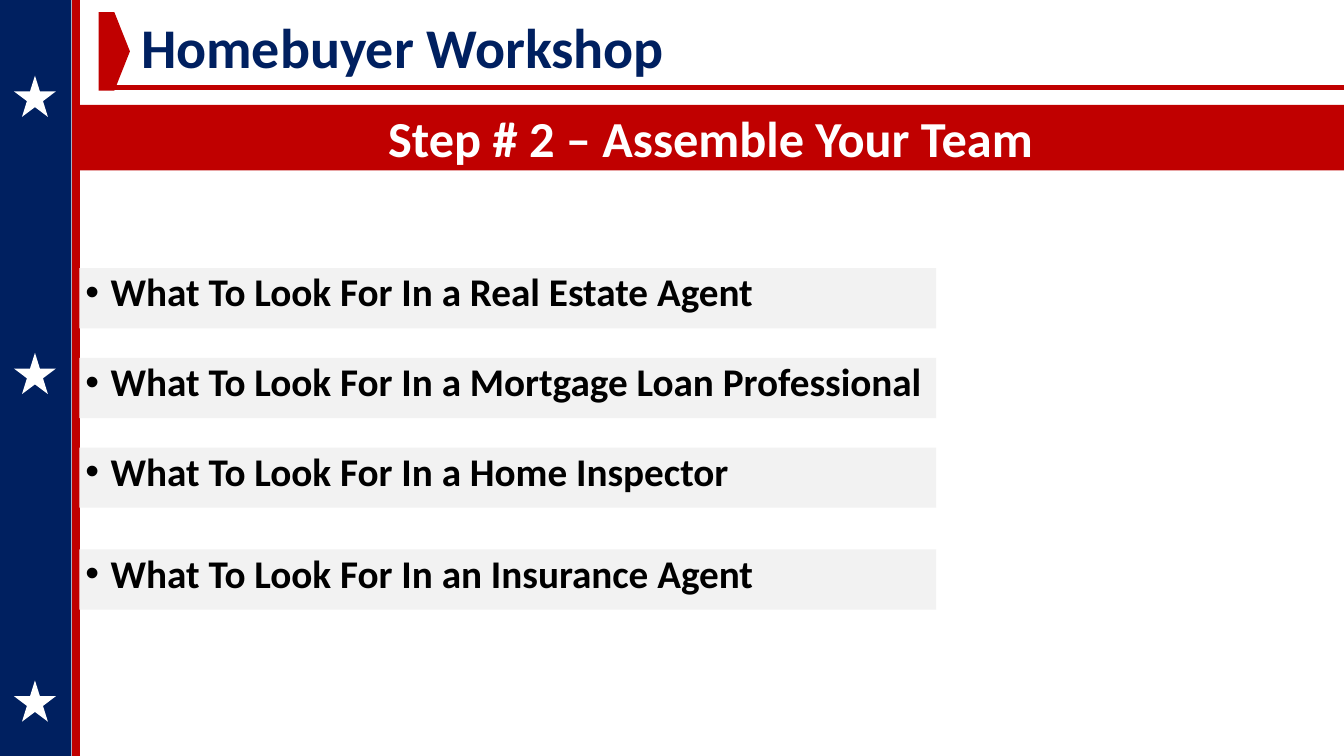
from dataclasses import dataclass

from lxml.etree import SubElement
from pptx import Presentation
from pptx.dml.color import RGBColor
from pptx.enum.shapes import MSO_CONNECTOR, MSO_SHAPE
from pptx.enum.text import MSO_ANCHOR, MSO_AUTO_SIZE, PP_ALIGN
from pptx.oxml.ns import qn
from pptx.util import Pt


@dataclass(frozen=True)
class Theme:
    font: str = "Calibri"
    navy: str = "002060"
    red: str = "C00000"
    white: str = "FFFFFF"
    black: str = "000000"
    pale: str = "F2F2F2"
    title: int = 40
    step: int = 36
    item: int = 28


class Deck:
    def __init__(self, theme, wide, high):
        self.theme = theme
        self.prs = Presentation()
        self.prs.slide_width, self.prs.slide_height = Pt(wide), Pt(high)
        self.slide = self.prs.slides.add_slide(self.prs.slide_layouts[5])

    def apply(self, target, values):
        for name, value in values.items():
            setattr(target, name, value)

    def label(self, shape, text, size, color, frame=None, para=None):
        self.apply(shape.text_frame, frame or {})
        line = shape.text_frame.paragraphs[0]
        self.apply(line, para or {})
        run = line.add_run()
        run.text = text
        self.apply(run.font, {"name": self.theme.font, "size": Pt(size), "bold": True})
        run.font.color.rgb = RGBColor.from_string(color)
        return line

    def title(self, text, *box):
        shape = self.slide.shapes.title
        self.apply(shape, dict(zip(("left", "top", "width", "height"), map(Pt, box))))
        self.label(shape, text, self.theme.title, self.theme.navy,
                   {"word_wrap": False, "auto_size": MSO_AUTO_SIZE.SHAPE_TO_FIT_TEXT,
                    "vertical_anchor": MSO_ANCHOR.TOP},
                   {"alignment": PP_ALIGN.LEFT})

    def block(self, kind, color, *box):
        shape = self.slide.shapes.add_shape(kind, *map(Pt, box))
        shape.shadow.inherit = False
        shape.fill.solid()
        shape.fill.fore_color.rgb = RGBColor.from_string(color)
        shape.line.fill.background()
        return shape

    def rule(self, width, *ends):
        line = self.slide.shapes.add_connector(MSO_CONNECTOR.STRAIGHT, *map(Pt, ends))
        line.line.width = Pt(width)
        line.line.color.rgb = RGBColor.from_string(self.theme.red)
        SubElement(line._element.spPr, qn("a:effectLst"))

    def bullet(self, text, *box):
        shape = self.slide.shapes.add_textbox(*map(Pt, box))
        line = self.label(shape, text, self.theme.item, self.theme.black,
                          {"word_wrap": True, "margin_right": 0},
                          {"line_spacing": 0.9, "space_before": Pt(10)})
        props = line._p.get_or_add_pPr()
        props.set("marL", str(Pt(18)))
        props.set("indent", str(-Pt(18)))
        SubElement(props, qn("a:buFont"), typeface="Arial")
        SubElement(props, qn("a:buChar"), char="•")


def main():
    theme = Theme()
    wide, high = 960, 540
    deck = Deck(theme, wide, high)

    # Side band with stars
    deck.block(MSO_SHAPE.RECTANGLE, theme.navy, 0, 0, 51, high)
    deck.rule(5.75, 54, 0, 54, high)
    for top in (54, 252, 486):
        deck.block(MSO_SHAPE.STAR_5_POINT, theme.white, 10, top, 30, 29.5)

    # Heading
    deck.block(MSO_SHAPE.PENTAGON, theme.red, 70.5, 8.6, 22.3, 56.2)
    deck.rule(3.25, 75.6, 62.7, wide, 62.7)
    deck.title("Homebuyer Workshop", 93.6, 5, 405.4, 55.4)

    # Bars with bullets
    items = (
        (191.5, "Real Estate Agent"),
        (255.6, "Mortgage Loan Professional"),
        (319.7, "Home Inspector"),
        (392.4, "Insurance Agent"),
    )
    for top, who in items:
        word = "an" if who[0] in "AEIOU" else "a"
        deck.block(MSO_SHAPE.RECTANGLE, theme.pale, 56.8, top, 612, 43)
        deck.bullet(f"What To Look For In {word} {who}", 54, top, 615, 43)

    # Step banner
    step = deck.block(MSO_SHAPE.RECTANGLE, theme.red, 55.4, 74.9, wide - 55.4, 46.8)
    deck.label(step, "Step # 2 – Assemble Your Team", theme.step, theme.white,
               {"word_wrap": True, "vertical_anchor": MSO_ANCHOR.MIDDLE},
               {"alignment": PP_ALIGN.CENTER})

    deck.prs.save("out.pptx")


if __name__ == "__main__":
    main()
